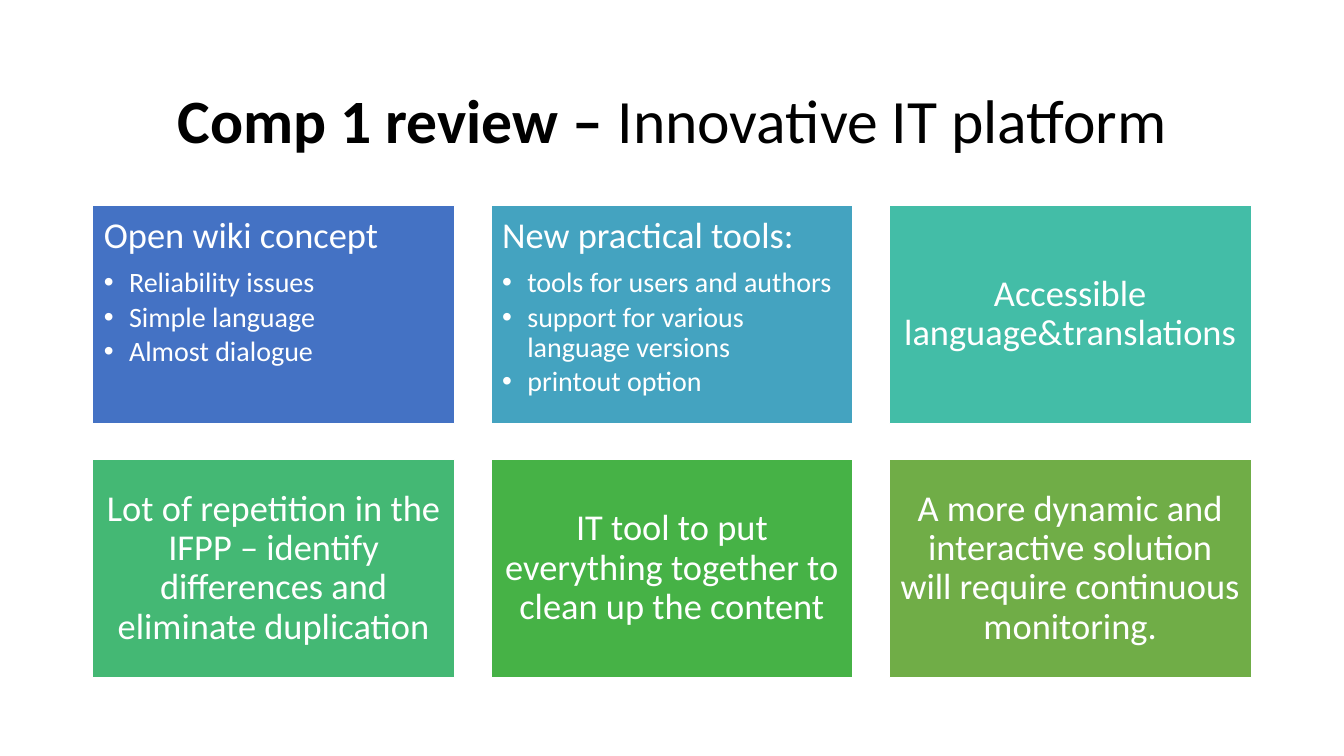
"""Build a slide with a title above a grid of six coloured review cards."""
from lxml.etree import SubElement
from pptx import Presentation
from pptx.dml.color import RGBColor
from pptx.enum.shapes import MSO_SHAPE
from pptx.enum.text import MSO_ANCHOR, PP_ALIGN
from pptx.oxml.ns import qn
from pptx.util import Inches, Pt

THEME = {
    "font": "Calibri",
    "black": RGBColor.from_string("000000"),
    "white": RGBColor.from_string("FFFFFF"),
    "cards": ["4472C4", "44A3C0", "43BDA7", "44B874", "46B246", "70AD47"],
    "title": Pt(44),
    "heading": Pt(26),
    "bullet": Pt(20),
}

CARDS = [
    ("Open wiki concept", ["Reliability issues", "Simple language", "Almost dialogue"]),
    ("New practical tools:", ["tools for users and authors",
                              "support for various language versions",
                              "printout option"]),
    ("Accessible language&translations", []),
    ("Lot of repetition in the IFPP – identify differences and eliminate duplication", []),
    ("IT tool to put everything together to clean up the content", []),
    ("A more dynamic and interactive solution will require continuous monitoring.", []),
]

LEFT, TOP, WIDTH, HEIGHT = 0.92, 2.04, 3.59, 2.16
COLUMNS, GAP = 3, 0.36


def add_run(p, text, size, color, bold=False):
    r = p.add_run()
    r.text = text
    r.font.color.rgb = color
    for name, value in {"name": THEME["font"], "size": size, "bold": bold}.items():
        setattr(r.font, name, value)


def format_paragraph(p, align, after):
    for name, value in {"alignment": align, "line_spacing": 0.9, "space_after": Pt(after)}.items():
        setattr(p, name, value)


prs = Presentation()
prs.slide_width, prs.slide_height = Inches(13.33), Inches(7.5)
s = prs.slides.add_slide(prs.slide_layouts[6])

tf = s.shapes.add_textbox(Inches(LEFT), Inches(0.61), Inches(11.5), Inches(1.24)).text_frame
tf.word_wrap = True
tf.vertical_anchor = MSO_ANCHOR.MIDDLE
p = tf.paragraphs[0]
format_paragraph(p, PP_ALIGN.CENTER, 6)
add_run(p, "Comp 1 review –", THEME["title"], THEME["black"], bold=True)
add_run(p, " Innovative IT platform", THEME["title"], THEME["black"])

for i, ((heading, bullets), fill) in enumerate(zip(CARDS, THEME["cards"])):
    row, col = divmod(i, COLUMNS)
    sp = s.shapes.add_shape(
        MSO_SHAPE.RECTANGLE,
        Inches(LEFT + col * (WIDTH + GAP)), Inches(TOP + row * (HEIGHT + GAP)),
        Inches(WIDTH), Inches(HEIGHT))
    sp.shadow.inherit = False
    sp.fill.solid()
    sp.fill.fore_color.rgb = RGBColor.from_string(fill)
    sp.line.color.rgb = THEME["white"]
    sp.line.width = Pt(1)

    tf = sp.text_frame
    tf.word_wrap = True
    tf.vertical_anchor = MSO_ANCHOR.TOP if bullets else MSO_ANCHOR.MIDDLE
    for side in ("left", "top", "right", "bottom"):
        setattr(tf, f"margin_{side}", Inches(0.11))

    p = tf.paragraphs[0]
    format_paragraph(p, PP_ALIGN.LEFT if bullets else PP_ALIGN.CENTER, 9)
    add_run(p, heading, THEME["heading"], THEME["white"])
    for text in bullets:
        p = tf.add_paragraph()
        p.level = 1
        format_paragraph(p, PP_ALIGN.LEFT, 3)
        pPr = p._p.get_or_add_pPr()
        pPr.set("marL", str(Inches(0.25)))
        pPr.set("indent", str(Inches(-0.25)))
        SubElement(pPr, qn("a:buFont"), typeface="Arial")
        SubElement(pPr, qn("a:buChar"), char="•")
        add_run(p, text, THEME["bullet"], THEME["white"])

prs.save("out.pptx")
